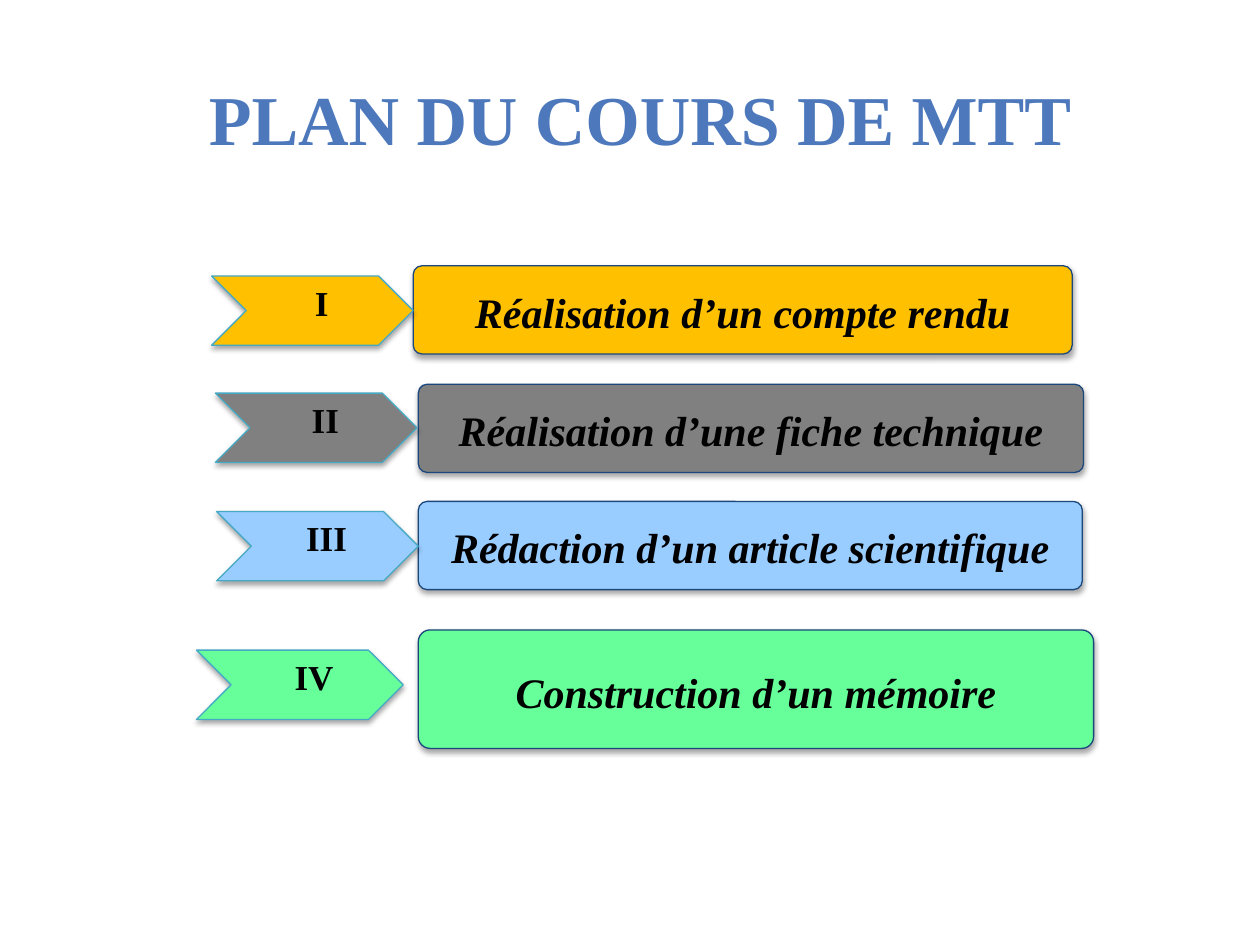
"""Build the course plan slide: a title and four numbered steps."""
from lxml.etree import SubElement
from pptx import Presentation
from pptx.dml.color import RGBColor
from pptx.enum.shapes import MSO_SHAPE
from pptx.enum.text import MSO_ANCHOR, PP_ALIGN
from pptx.oxml.ns import qn
from pptx.util import Inches, Pt

TITLE = "PLAN DU COURS DE MTT"
COLORS = {"title": "4D79BC", "text": "000000", "box": "1C477D", "arrow": "46AAC5",
          "gold": "FFC000", "gray": "808080", "blue": "99CCFF", "green": "66FF99"}
STEPS = [
    {"num": "I", "text": "Réalisation d’un compte rendu", "fill": "gold",
     "box": (3.28, 2.11, 5.23, 0.7), "arrow": (1.68, 2.19, 1.6, 0.55), "indent": 0.44},
    {"num": "II", "text": "Réalisation d’une fiche technique", "fill": "gray",
     "box": (3.32, 3.05, 5.28, 0.7), "arrow": (1.71, 3.12, 1.6, 0.55), "indent": 0.44},
    {"num": "III", "text": "Rédaction d’un article scientifique", "fill": "blue",
     "box": (3.32, 3.98, 5.27, 0.7), "arrow": (1.72, 4.06, 1.6, 0.55), "indent": 0.44},
    {"num": "IV", "text": "Construction d’un mémoire", "fill": "green",
     "box": (3.32, 5, 5.36, 0.94), "arrow": (1.56, 5.16, 1.64, 0.55), "indent": 0.49},
]
TITLE_FONT = {"size": Pt(40), "bold": True}
STEP_FONT = {"size": Pt(24), "bold": True, "italic": True}
NUM_FONT = {"size": Pt(20), "bold": True}


def rgb(name):
    return RGBColor.from_string(COLORS[name])


def write(sp, text, color, font, inset, spacing=1.0):
    tf = sp.text_frame
    tf.word_wrap = True
    tf.vertical_anchor = MSO_ANCHOR.MIDDLE
    for side in ("left", "right", "top", "bottom"):
        setattr(tf, f"margin_{side}", Inches(inset))
    p = tf.paragraphs[0]
    p.alignment = PP_ALIGN.CENTER
    p.line_spacing = spacing
    r = p.add_run()
    r.text = text
    r.font.name = "Times New Roman"
    r.font.color.rgb = rgb(color)
    for key, value in font.items():
        setattr(r.font, key, value)


def add_shape(group, kind, at, fill, line=None):
    sp = group.shapes.add_shape(kind, *map(Inches, at))
    sp.shadow.inherit = False
    sp.fill.solid()
    sp.fill.fore_color.rgb = rgb(fill)
    if line:
        sp.line.color.rgb = rgb(line)
        sp.line.width = Pt(0.75)
        add_shadow(sp)
    else:
        sp.line.fill.background()
    return sp


def add_shadow(sp):
    effects = sp._element.spPr.find(qn("a:effectLst"))
    shadow = SubElement(effects, qn("a:outerShdw"), blurRad=str(Pt(3.1)),
                        dist=str(Pt(1.8)), dir="5400000", rotWithShape="0")
    color = SubElement(shadow, qn("a:srgbClr"), val="000000")
    SubElement(color, qn("a:alpha"), val="35000")


def add_box(s, step):
    x, y, w, h = step["box"]
    group = s.shapes.add_group_shape()
    sp = add_shape(group, MSO_SHAPE.ROUNDED_RECTANGLE, step["box"], step["fill"], "box")
    sp.adjustments[0] = 0.1
    label = add_shape(group, MSO_SHAPE.RECTANGLE,
                      (x + 0.05, y + 0.2 * h, w - 0.1, 0.7 * h), step["fill"])
    write(label, step["text"], "text", STEP_FONT, 0.1, 0.9)


def add_arrow(s, step):
    x, y, w, h = step["arrow"]
    group = s.shapes.add_group_shape()
    add_shape(group, MSO_SHAPE.CHEVRON, step["arrow"], step["fill"], "arrow")
    label = add_shape(group, MSO_SHAPE.RECTANGLE,
                      (x + step["indent"], y + 0.08, 0.54 * w, 0.3), step["fill"])
    write(label, step["num"], "text", NUM_FONT, 0.02, 0.9)


def main():
    prs = Presentation()
    prs.slide_width, prs.slide_height = Inches(10), Inches(7.5)
    s = prs.slides.add_slide(prs.slide_layouts[6])
    title = s.shapes.add_textbox(*map(Inches, (0.94, 0.55, 8.28, 0.77)))
    write(title, TITLE, "title", TITLE_FONT, 0.05)
    for step in STEPS:
        add_box(s, step)
        add_arrow(s, step)
    prs.save("out.pptx")


if __name__ == "__main__":
    main()
